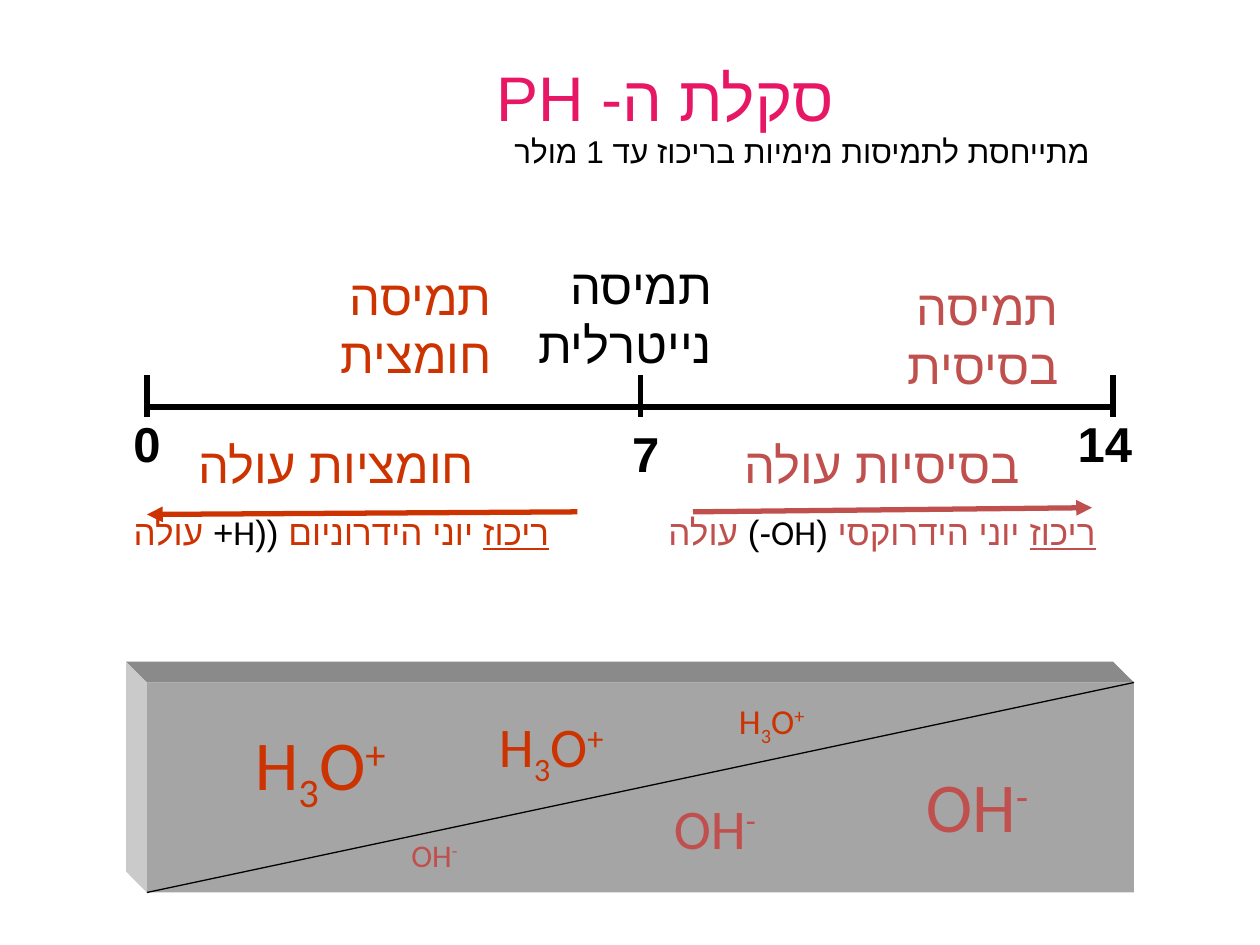
import pptx
import pptx.dml.color
import pptx.enum.shapes
import pptx.enum.text
import pptx.oxml
import pptx.oxml.ns
import pptx.util

ALIGN = pptx.enum.text.PP_ALIGN
CELL = 1 / 12  # the slide is a grid of 120 columns by 90 rows, in inches
BLACK, ACID, BASE, PINK = "000000", "CC3300", "C0504D", "E81766"
SUB, SUPER = -25, 30


def rgb(code):
    return pptx.dml.color.RGBColor.from_string(code)


def grid(*cells):
    return [pptx.util.Inches(cell * CELL) for cell in cells]


def add_element(parent, tag, **attributes):
    element = pptx.oxml.parse_xml(f"<{tag} {pptx.oxml.ns.nsdecls('a')}/>")
    for name, value in attributes.items():
        element.set(name, value)
    parent.append(element)


class ScalePage:
    """Holds the style and the shapes being drawn on."""

    font, hebrew_font = "Calibri", "Arial"

    def __init__(self, deck):
        self.shapes = deck.slides.add_slide(deck.slide_layouts[6]).shapes

    def start_group(self):
        self.shapes = self.shapes.add_group_shape().shapes

    def text(self, place, paras, align=ALIGN.RIGHT, rtl=True, wrap=True, font=None):
        """Each paragraph is a list of (words, size, colour, options)."""
        frame = self.shapes.add_textbox(*grid(*place)).text_frame
        frame.word_wrap = wrap
        for index, spans in enumerate(paras):
            para = frame.paragraphs[0] if index == 0 else frame.add_paragraph()
            para.alignment = align
            if index:
                para.space_before = pptx.util.Pt(10)
            if rtl:
                para._p.get_or_add_pPr().set("rtl", "1")
            for words, size, colour, options in spans:
                self.span(para, words, size, colour, font or self.font, **options)

    def span(self, para, words, size, colour, font, bold=None, underline=None, shift=0):
        span = para.add_run()
        span.text = words
        span.font.name = font
        span.font.size = pptx.util.Pt(size)
        span.font.bold = bold
        span.font.underline = underline
        span.font.color.rgb = rgb(colour)
        properties = span.font._element
        if shift:
            properties.set("baseline", str(shift * 1000))
        add_element(properties, "a:cs", typeface=self.hebrew_font)

    def line(self, start, end, colour=BLACK, width=3, arrow=False):
        line = self.shapes.add_connector(
            pptx.enum.shapes.MSO_CONNECTOR.STRAIGHT, *grid(*start, *end))
        line.line.color.rgb = rgb(colour)
        line.line.width = pptx.util.Pt(width)
        if arrow:
            add_element(line.line._get_or_add_ln(), "a:tailEnd", type="triangle")
        add_element(line._element.spPr, "a:effectLst")

    def paint(self, shape, colour):
        shape.shadow.inherit = False
        shape.fill.solid()
        shape.fill.fore_color.rgb = rgb(colour)
        shape.line.fill.background()

    def rectangle(self, place, colour):
        kind = pptx.enum.shapes.MSO_SHAPE.RECTANGLE
        self.paint(self.shapes.add_shape(kind, *grid(*place)), colour)

    def polygon(self, points, colour):
        first, *others = [grid(*point) for point in points]
        builder = self.shapes.build_freeform(*first)
        builder.add_line_segments(others, close=True)
        self.paint(builder.convert_to_shape(), colour)


def draw_scale(page):
    # Heading
    page.text((46, 5, 34.7, 6.8), [[("סקלת ה- PH", 36, PINK, {})]],
              ALIGN.CENTER, wrap=False, font="Arial")
    page.text((11, 12, 94, 6),
              [[("מתייחסת לתמיסות מימיות בריכוז עד 1 מולר", 18, BLACK, {})]])

    # Axis with its ticks and numbers
    left, middle, right, axis = 14, 61, 106, 38.75
    page.line((left, axis), (right, axis))
    for tick in (left, middle, right):
        page.line((tick, axis - 3), (tick, axis + 1))
    for number, place, align in (
            ("0", (10, axis, 8, 6.8), ALIGN.CENTER),
            ("7", (57, axis + 1, 9, 6.8), ALIGN.CENTER),
            ("14", (99, axis, 10, 6.8), ALIGN.RIGHT)):
        page.text(place, [[(number, 28, BLACK, {"bold": True})]], align)

    # Kinds of solution above the axis
    for words, place, colour in (
            ("תמיסה חומצית", (21, 24.75, 27, 12.4), ACID),
            ("תמיסה נייטרלית", (50, 23.75, 19, 12.4), BLACK),
            ("תמיסה בסיסית", (75, 25.75, 27, 12.4), BASE)):
        page.text(place, [[(words, 28, colour, {})]])

    # Trends below the axis
    for title, ions, formula, last, place, colour in (
            ("בסיסיות עולה", " יוני הידרוקסי ", "(OH-) ", "עולה",
             (60, 40.75, 48, 13), BASE),
            ("חומציות עולה", " יוני הידרוניום ", "((H+ ", "עולה ",
             (5.2, 40.75, 53.7, 13), ACID)):
        page.text(place, [
            [(title, 28, colour, {})],
            [("ריכוז", 20, colour, {"underline": True}), (ions, 20, colour, {}),
             (formula, 20, BLACK, {}), (last, 20, colour, {})]], ALIGN.CENTER)
    page.line((66, 48.75), (104, 48.35), BASE, arrow=True)
    page.line((55, 48.75), (14, 49), ACID, arrow=True)


def draw_block(page):
    # Solid block: front, top and left side
    left, top, right, bottom, depth = 14, 65, 108, 85, 2
    page.start_group()
    page.rectangle((left, top, right - left, bottom - top), "A5A5A5")
    page.polygon([(left, top), (right, top), (right - depth, top - depth),
                  (left - depth, top - depth)], "8A8A8A")
    page.polygon([(left, top), (left, bottom), (left - depth, bottom - depth),
                  (left - depth, top - depth)], "CACACA")
    page.line((left, bottom), (right, top), width=0.75)

    # Ions shrinking toward the other end
    for size, place in ((40, (22, 68, 17, 9.2)), (32, (44, 67.2, 17, 7.6)),
                        (20, (65, 66, 17, 5.2))):
        page.text(place, [[("H", size, ACID, {}), ("3", size, ACID, {"shift": SUB}),
                           ("O", size, ACID, {}), ("+", size, ACID, {"shift": SUPER})]],
                  ALIGN.CENTER, rtl=False)
    for size, place in ((40, (87, 72, 15, 9.2)), (32, (63, 75, 15, 7.6)),
                        (18, (38, 79, 15, 6))):
        page.text(place, [[("OH", size, BASE, {}), ("-", size, BASE, {"shift": SUPER})]],
                  ALIGN.LEFT, rtl=False)


def main():
    deck = pptx.Presentation()
    deck.slide_width, deck.slide_height = grid(120, 90)
    page = ScalePage(deck)
    draw_scale(page)
    draw_block(page)
    deck.save("out.pptx")


if __name__ == "__main__":
    main()
